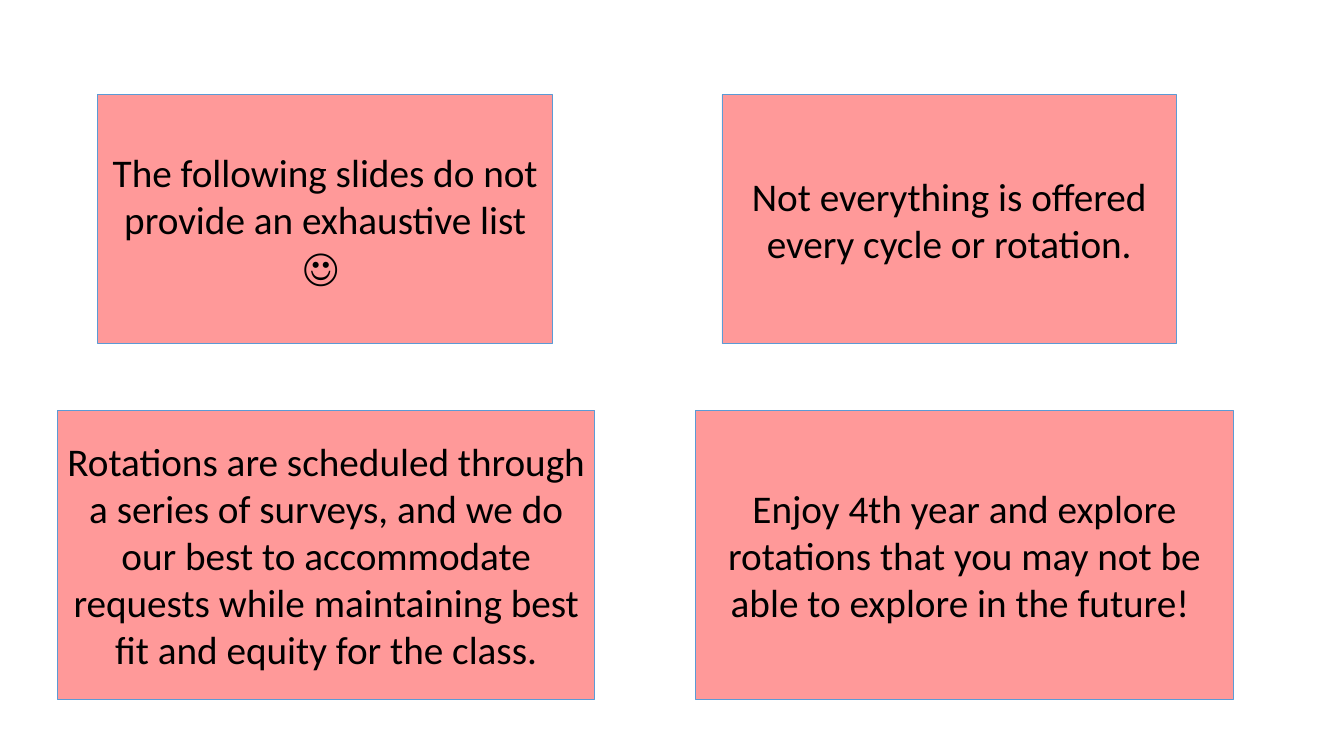
from pptx import Presentation
from pptx.dml.color import RGBColor as RGB
from pptx.enum.shapes import MSO_SHAPE as SHAPE
from pptx.enum.text import MSO_ANCHOR as ANCHOR, PP_ALIGN as ALIGN
from pptx.util import Inches, Pt

COLORS = {"fill": "FF9999", "line": "5B9BD5", "text": "000000"}

ROWS = [
    (0.94, 4.51, 2.47, [
        (0.97, "The following slides do not provide an exhaustive list ☺ "),
        (7.16, "Not everything is offered every cycle or rotation."),
    ]),
    (4.07, 5.33, 2.87, [
        (0.57, "Rotations are scheduled through a series of surveys, and we do "
               "our best to accommodate requests while maintaining best fit "
               "and equity for the class."),
        (6.9, "Enjoy 4th year and explore rotations that you may not be able "
              "to explore in the future! "),
    ]),
]


def color(name):
    return RGB.from_string(COLORS[name])


def add_card(slide, left, top, width, height, text):
    card = slide.shapes.add_shape(
        SHAPE.RECTANGLE, Inches(left), Inches(top), Inches(width), Inches(height))
    card.shadow.inherit = False
    card.fill.solid()
    card.fill.fore_color.rgb = color("fill")
    card.line.color.rgb = color("line")
    card.line.width = Pt(0.5)
    frame = card.text_frame
    frame.word_wrap = True
    frame.vertical_anchor = ANCHOR.MIDDLE
    para = frame.paragraphs[0]
    para.text = text
    para.alignment = ALIGN.CENTER
    para.font.name = "Calibri"
    para.font.size = Pt(28)
    para.font.color.rgb = color("text")


def main():
    deck = Presentation()
    deck.slide_width = Inches(13.33)
    deck.slide_height = Inches(7.5)
    slide = deck.slides.add_slide(deck.slide_layouts[6])
    for top, width, height, cards in ROWS:
        for left, text in cards:
            add_card(slide, left, top, width, height, text)
    deck.save("out.pptx")


if __name__ == "__main__":
    main()
